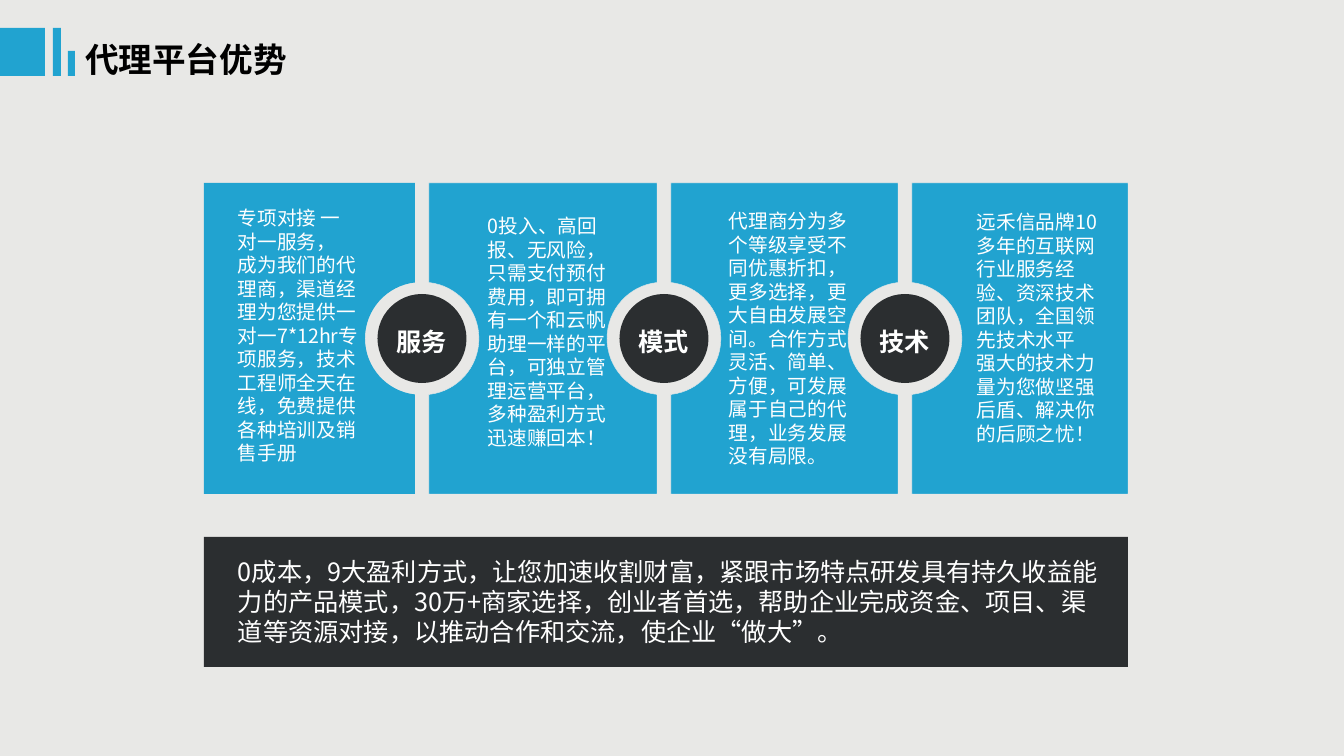
import lxml.etree
import pptx
import pptx.dml.color
import pptx.enum.shapes
import pptx.enum.text
import pptx.oxml.ns
import pptx.util

RGB = pptx.dml.color.RGBColor
BACKGROUND = RGB(0xE8, 0xE8, 0xE6)
BLUE = RGB(0x21, 0xA3, 0xD0)
DARK = RGB(0x2B, 0x2E, 0x30)
EDGE = RGB(0xEA, 0xEA, 0xEA)
WHITE = RGB(0xFF, 0xFF, 0xFF)
BLACK = RGB(0, 0, 0)
FONT = "Noto Sans CJK SC"
ALIGN = pptx.enum.text.PP_ALIGN
ANCHOR = pptx.enum.text.MSO_ANCHOR
SHAPE = pptx.enum.shapes.MSO_SHAPE
qn = pptx.oxml.ns.qn

# Content: lengths in px
HEADING = "代理平台优势"
HEADING_BOX = (75, 34, 347, 53)
HEADING_BARS = [(0, 28, 45, 48), (53, 28, 8, 48), (68, 51, 7, 25)]
PANELS = [  # left, right, text box, paragraphs
    (204, 415, (228, 201, 142, 270),
     ["专项对接 一对一服务，",
      "成为我们的代理商，渠道经理为您提供一对一7*12hr专项服务，技术工程师全天在线，免费提供各种培训及销售手册"]),
    (429, 657, (478, 209, 142, 247),
     ["0投入、高回报、无风险，只需支付预付费用，即可拥有一个和云帆助理一样的平台，可独立管理运营平台，多种盈利方式迅速赚回本！"]),
    (671, 898, (719, 204, 142, 270),
     ["代理商分为多个等级享受不同优惠折扣，更多选择，更大自由发展空间。合作方式灵活、简单、方便，可发展属于自己的代理，业务发展没有局限。"]),
    (912, 1128, (967, 205, 142, 247),
     ["远禾信品牌10多年的互联网行业服务经验、资深技术团队，全国领先技术水平",
      "强大的技术力量为您做坚强后盾、解决你的后顾之忧！"]),
]
THEMES = ["服务", "模式", "技术"]
BANNER_BOX = (204, 537, 924, 130)
BANNER_TEXT_BOX = (228, 551, 881, 103)
BANNER = ("0成本，9大盈利方式，让您加速收割财富，紧跟市场特点研发具有持久收益能力的产品模式，"
          "30万+商家选择，创业者首选，帮助企业完成资金、项目、渠道等资源对接，以推动合作和交流，使企业“做大”。")

PANEL_TOP, PANEL_BOTTOM = 183, 494
MIDDLE = (PANEL_TOP + PANEL_BOTTOM) / 2
HALF_GAP = 7
DISC = 89
# Notch as depth into the panel and height from the middle: two Bezier curves
NOTCH = [(0, -56), (28, -53), (50, -29), (50, 0), (50, 29), (28, 53), (0, 56)]


def px(length):
    return pptx.util.Emu(round(length * 914400 / 100.8))


def write(shape, paragraphs, size, color=WHITE, bold=False, align=ALIGN.LEFT,
          anchor=ANCHOR.TOP, spacing=None, inset=None):
    frame = shape.text_frame
    frame.word_wrap = True
    frame.vertical_anchor = anchor
    if inset is not None:
        frame.margin_left = frame.margin_right = inset
        frame.margin_top = frame.margin_bottom = inset
    frame.text = "\n".join(paragraphs)
    for paragraph in frame.paragraphs:
        paragraph.alignment = align
        paragraph.line_spacing = spacing
        paragraph._p.get_or_add_pPr().set("hangingPunct", "0")
        for run in paragraph.runs:
            run.font.name = FONT
            run.font.size = pptx.util.Pt(size)
            run.font.bold = bold
            run.font.color.rgb = color
            lxml.etree.SubElement(run._r.get_or_add_rPr(), qn("a:ea"), typeface=FONT)


def paint(shape, fill, edge=None):
    shape.shadow.inherit = False
    shape.fill.solid()
    shape.fill.fore_color.rgb = fill
    if edge is None:
        shape.line.fill.background()
    else:
        shape.line.color.rgb = edge
        shape.line.width = pptx.util.Pt(0.25)


def add_filled(kind, box, fill):
    shape = slide.shapes.add_shape(kind, *map(px, box))
    paint(shape, fill)
    return shape


def curve(segments):
    """Turn three line segments into one cubic Bezier segment."""
    bezier = lxml.etree.Element(qn("a:cubicBezTo"))
    segments[0].addprevious(bezier)
    for segment in segments:
        bezier.append(segment[0])
        segment.getparent().remove(segment)


def add_panel(left, right, notch_left, notch_right):
    outline = [(left, PANEL_TOP), (right, PANEL_TOP)]
    curve_starts = []
    if notch_right:
        curve_starts += [len(outline), len(outline) + 3]
        outline += [(right - depth, MIDDLE + height) for depth, height in NOTCH]
    outline += [(right, PANEL_BOTTOM), (left, PANEL_BOTTOM)]
    if notch_left:
        curve_starts += [len(outline), len(outline) + 3]
        outline += [(left + depth, MIDDLE - height) for depth, height in NOTCH]
    points = [(px(x), px(y)) for x, y in outline]
    builder = slide.shapes.build_freeform(*points[0])
    builder.add_line_segments(points[1:])
    panel = builder.convert_to_shape()
    segments = list(panel._element.iter(qn("a:lnTo")))
    for start in curve_starts:
        curve(segments[start:start + 3])
    return panel


deck = pptx.Presentation()
deck.slide_width, deck.slide_height = px(1344), px(756)
slide = deck.slides.add_slide(deck.slide_layouts[5])
slide.background.fill.solid()
slide.background.fill.fore_color.rgb = BACKGROUND

# Heading
heading = slide.shapes.title
heading.left, heading.top, heading.width, heading.height = map(px, HEADING_BOX)
write(heading, [HEADING], 24, BLACK, bold=True)
for bar in HEADING_BARS:
    add_filled(SHAPE.RECTANGLE, bar, BLUE)

# Panels, notched where they face a neighbour
for index, (left, right, text_box, paragraphs) in enumerate(PANELS):
    panel = add_panel(left, right, index > 0, index < len(PANELS) - 1)
    paint(panel, BLUE, EDGE if index else None)
    write(slide.shapes.add_textbox(*map(px, text_box)), paragraphs, 14)

# Theme discs, centred in the gaps
for theme, (_, right, _, _) in zip(THEMES, PANELS):
    disc_left = right + HALF_GAP - DISC / 2
    disc = add_filled(SHAPE.OVAL, (disc_left, MIDDLE - DISC / 2, DISC, DISC), DARK)
    write(disc, [theme], 18, bold=True, align=ALIGN.CENTER, anchor=ANCHOR.MIDDLE,
          spacing=1.2, inset=0)

# Banner
add_filled(SHAPE.RECTANGLE, BANNER_BOX, DARK)
write(slide.shapes.add_textbox(*map(px, BANNER_TEXT_BOX)), [BANNER], 18)

deck.save("out.pptx")
